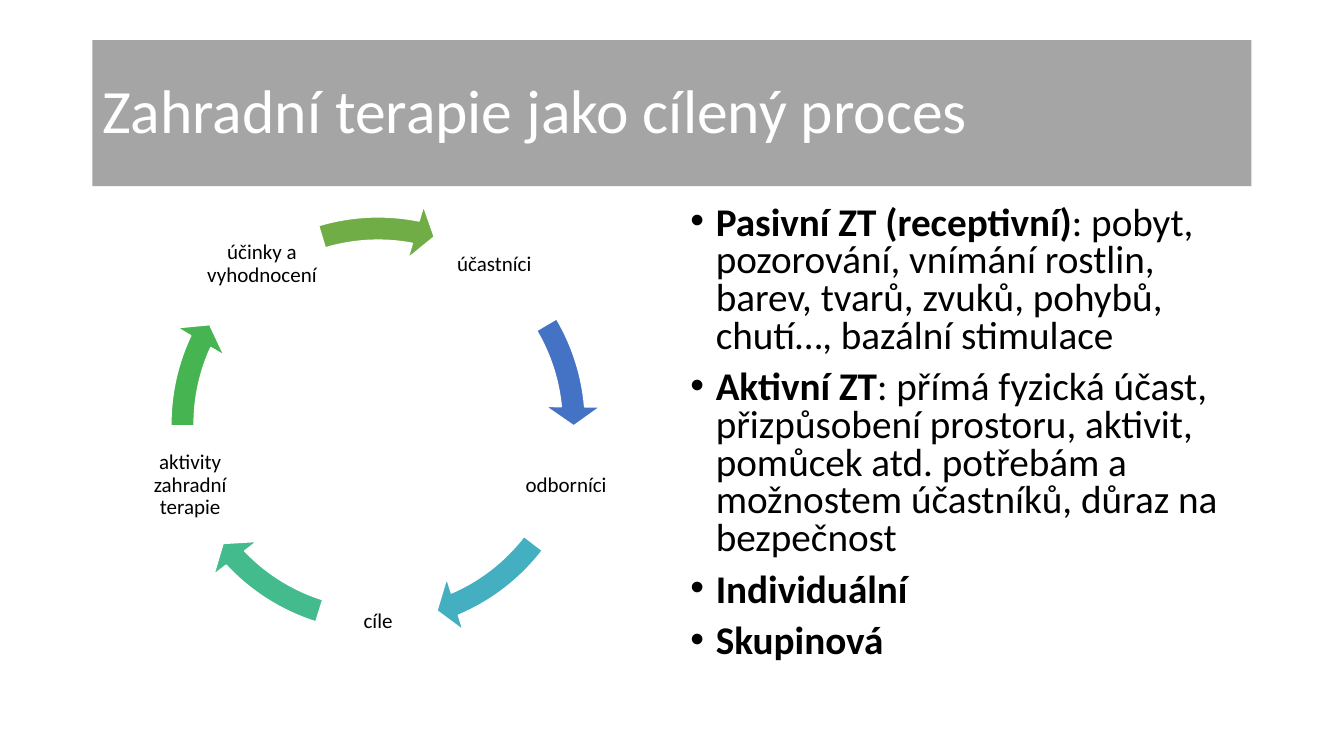
from dataclasses import dataclass
from math import cos, radians, sin

from lxml import etree
from pptx import Presentation
from pptx.dml.color import RGBColor
from pptx.enum.shapes import MSO_SHAPE
from pptx.enum.text import MSO_ANCHOR, PP_ALIGN
from pptx.oxml.ns import qn
from pptx.util import Cm, Pt

RECT = MSO_SHAPE.RECTANGLE
CIRCULAR_ARROW = MSO_SHAPE.CIRCULAR_ARROW
MIDDLE, TOP = MSO_ANCHOR.MIDDLE, MSO_ANCHOR.TOP
LEFT, CENTER = PP_ALIGN.LEFT, PP_ALIGN.CENTER

FONT = "Calibri"
BLACK, WHITE, GRAY = "000000", "FFFFFF", "A5A5A5"
CYCLE_X, CYCLE_Y, CYCLE_RADIUS = 9.53, 10.69, 4.98
RING_SIZE, LABEL_SIZE, LABEL_INSET = 11.23, 3.0, 0.05
FIRST_ANGLE = -54
BULLET_INDENT = 0.64


@dataclass(frozen=True)
class Stage:
    label: str
    color: str
    arrow_end: float
    arrow_start: float


@dataclass(frozen=True)
class Bullet:
    term: str
    detail: str = ""


STAGES = [
    Stage("účastníci", "4472C4", 212.93, 197.67),
    Stage("odborníci", "43AFC0", 40.14, 22.54),
    Stage("cíle", "43BB8D", 82.1, 64.5),
    Stage("aktivity zahradní terapie", "45B451", 122.98, 107.71),
    Stage("účinky a vyhodnocení", "70AD47", 168.65, 151.99),
]

BULLETS = [
    Bullet("Pasivní ZT (receptivní)",
           ": pobyt, pozorování, vnímání rostlin, barev, tvarů, zvuků, "
           "pohybů, chutí…, bazální stimulace"),
    Bullet("Aktivní ZT",
           ": přímá fyzická účast, přizpůsobení prostoru, aktivit, pomůcek "
           "atd. potřebám a možnostem účastníků, důraz na bezpečnost"),
    Bullet("Individuální"),
    Bullet("Skupinová"),
]


def rgb(color: str) -> RGBColor:
    return RGBColor.from_string(color)


def style_paragraph(p, size: float, color: str, align, spacing: float) -> None:
    p.alignment = align
    p.line_spacing = spacing
    p.font.name = FONT
    p.font.size = Pt(size)
    p.font.color.rgb = rgb(color)


def add_panel(shapes, left: float, top: float, width: float, height: float,
              fill: str, anchor):
    sp = shapes.add_shape(RECT, Cm(left), Cm(top), Cm(width), Cm(height))
    sp.shadow.inherit = False
    sp.fill.solid()
    sp.fill.fore_color.rgb = rgb(fill)
    sp.line.fill.background()
    tf = sp.text_frame
    tf.word_wrap = True
    tf.vertical_anchor = anchor
    return tf


def add_label(shapes, stage: Stage, angle: float) -> None:
    left = CYCLE_X + CYCLE_RADIUS * cos(radians(angle)) - LABEL_SIZE / 2
    top = CYCLE_Y + CYCLE_RADIUS * sin(radians(angle)) - LABEL_SIZE / 2
    sp = shapes.add_textbox(Cm(left), Cm(top), Cm(LABEL_SIZE), Cm(LABEL_SIZE))
    tf = sp.text_frame
    tf.word_wrap = True
    tf.vertical_anchor = MIDDLE
    tf.margin_left = tf.margin_right = Cm(LABEL_INSET)
    tf.margin_top = tf.margin_bottom = Cm(LABEL_INSET)
    p = tf.paragraphs[0]
    p.text = stage.label
    style_paragraph(p, 15, BLACK, CENTER, 0.9)


def add_arrow(shapes, stage: Stage) -> None:
    sp = shapes.add_shape(CIRCULAR_ARROW, Cm(CYCLE_X - RING_SIZE / 2),
                          Cm(CYCLE_Y - RING_SIZE / 2), Cm(RING_SIZE), Cm(RING_SIZE))
    sp.shadow.inherit = False
    sp.fill.solid()
    sp.fill.fore_color.rgb = rgb(stage.color)
    sp.line.color.rgb = rgb(WHITE)
    sp.line.width = Pt(1)
    settings = (0.052, 3.36, stage.arrow_end, stage.arrow_start, 0.061)
    for i, value in enumerate(settings):
        sp.adjustments[i] = value


def add_cycle(s) -> None:
    shapes = s.shapes.add_group_shape().shapes
    for i, stage in enumerate(STAGES):
        add_label(shapes, stage, FIRST_ANGLE + i * 360 / len(STAGES))
        add_arrow(shapes, stage)


def add_bullet(p, bullet: Bullet) -> None:
    style_paragraph(p, 28, BLACK, LEFT, 0.8)
    p.space_before = Pt(10)
    r = p.add_run()
    r.text = bullet.term
    r.font.bold = True
    if bullet.detail:
        p.add_run().text = bullet.detail
    pPr = p._p.get_or_add_pPr()
    pPr.set("marL", str(Cm(BULLET_INDENT)))
    pPr.set("indent", str(-Cm(BULLET_INDENT)))
    font = etree.Element(qn("a:buFont"), typeface="Arial")
    char = etree.Element(qn("a:buChar"), char="•")
    defaults = pPr.find(qn("a:defRPr"))
    defaults.addprevious(font)
    defaults.addprevious(char)


def main() -> None:
    prs = Presentation()
    prs.slide_width, prs.slide_height = Cm(33.87), Cm(19.05)
    s = prs.slides.add_slide(prs.slide_layouts[6])

    title = add_panel(s.shapes, 2.33, 1.01, 29.21, 3.68, GRAY, MIDDLE)
    p = title.paragraphs[0]
    p.text = "Zahradní terapie jako cílený proces"
    style_paragraph(p, 44, WHITE, LEFT, 0.9)

    add_cycle(s)

    body = add_panel(s.shapes, 17.15, 5.07, 14.4, 12.09, WHITE, TOP)
    for i, bullet in enumerate(BULLETS):
        add_bullet(body.add_paragraph() if i else body.paragraphs[0], bullet)

    prs.save("out.pptx")


if __name__ == "__main__":
    main()
